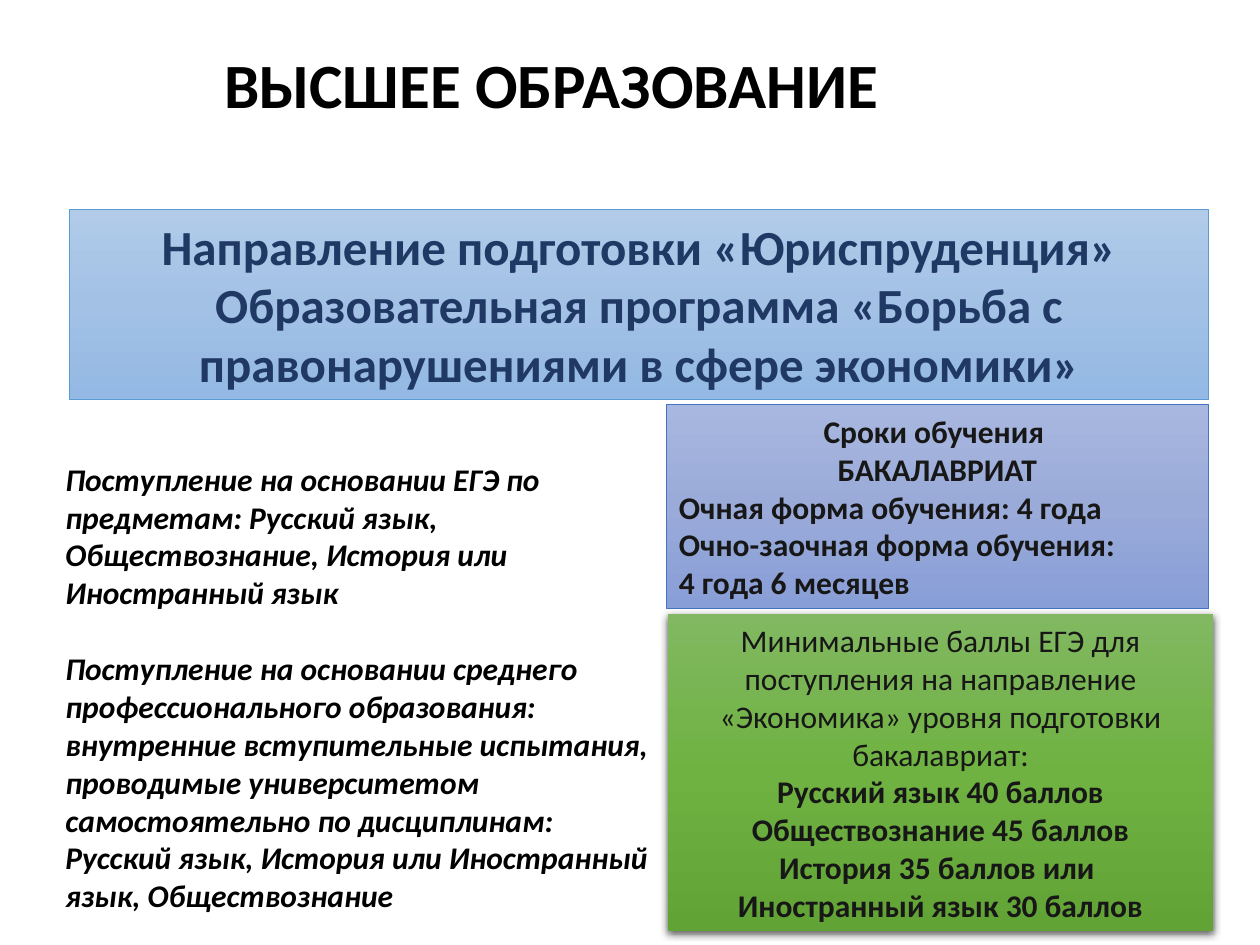
from copy import deepcopy

from lxml.etree import SubElement
from pptx import Presentation
from pptx.dml.color import RGBColor
from pptx.enum.shapes import MSO_SHAPE
from pptx.enum.text import MSO_ANCHOR, PP_ALIGN
from pptx.oxml.ns import qn
from pptx.util import Inches, Pt

BLACK = RGBColor(0x00, 0x00, 0x00)
INK = RGBColor(0x18, 0x17, 0x17)
NAVY = RGBColor(0x20, 0x38, 0x64)
SKY_EDGE = RGBColor(0x5B, 0x9B, 0xD5)
INDIGO_EDGE = RGBColor(0x44, 0x72, 0xC4)
SKY = [RGBColor(0xB1, 0xCB, 0xE9), RGBColor(0xA3, 0xC1, 0xE5), RGBColor(0x93, 0xB9, 0xE4)]
INDIGO = [RGBColor(0xA8, 0xB7, 0xDF), RGBColor(0x9A, 0xAB, 0xD9), RGBColor(0x88, 0x9E, 0xD7)]
GREEN = [RGBColor(0x81, 0xB8, 0x61), RGBColor(0x6F, 0xB2, 0x42), RGBColor(0x62, 0xA3, 0x36)]

FONT = "Calibri"
BODY_SIZE = 18
BLANK_LINE = Pt(22)
SLIDE_WIDTH, SLIDE_HEIGHT = Inches(10), Inches(7.5)


def area(left, top, width, height):
    return [Inches(length) for length in (left, top, width, height)]


def write(frame, lines, size, color, align=PP_ALIGN.CENTER, bold=True, italic=False):
    frame.word_wrap = True
    for index, line in enumerate(lines):
        paragraph = frame.paragraphs[0] if index == 0 else frame.add_paragraph()
        paragraph.text = line
        paragraph.alignment = align
        font = paragraph.font
        font.name, font.size = FONT, Pt(size)
        font.bold, font.italic = bold, italic
        font.color.rgb = color
    return frame.paragraphs


def add_panel(slide, box, shades, edge=None):
    panel = slide.shapes.add_shape(MSO_SHAPE.RECTANGLE, *box)
    panel.shadow.inherit = False
    panel.fill.gradient()
    panel.fill.gradient_angle = 270
    stops = panel._element.spPr.find(qn("a:gradFill")).find(qn("a:gsLst"))
    stops.insert(1, deepcopy(stops[0]))
    for stop, shade, position in zip(panel.fill.gradient_stops, shades, (0, 0.5, 1)):
        stop.color.rgb = shade
        stop.position = position
    if edge is None:
        panel.line.fill.background()
    else:
        panel.line.color.rgb = edge
        panel.line.width = Pt(0.5)
    panel.text_frame.vertical_anchor = MSO_ANCHOR.MIDDLE
    return panel


def add_drop_shadow(panel):
    effects = panel._element.spPr.find(qn("a:effectLst"))
    shadow = SubElement(effects, qn("a:outerShdw"), blurRad=str(Pt(4.5)),
                        dist=str(Pt(1.5)), dir="5400000", algn="ctr", rotWithShape="0")
    color = SubElement(shadow, qn("a:srgbClr"), val=str(BLACK))
    SubElement(color, qn("a:alpha"), val="63000")


def add_heading(slide, box):
    frame = slide.shapes.add_textbox(*box).text_frame
    frame.vertical_anchor = MSO_ANCHOR.MIDDLE
    heading, = write(frame, ["ВЫСШЕЕ ОБРАЗОВАНИЕ"], 36, BLACK)
    heading.line_spacing = 0.9


def add_programme(slide, box):
    panel = add_panel(slide, box, SKY, SKY_EDGE)
    write(panel.text_frame, [
        "Направление подготовки «Юриспруденция»",
        "Образовательная программа «Борьба с правонарушениями в сфере экономики»",
    ], 28, NAVY)


def add_study_terms(slide, box):
    panel = add_panel(slide, box, INDIGO, INDIGO_EDGE)
    terms = write(panel.text_frame, [
        "Сроки обучения ",
        "БАКАЛАВРИАТ",
        "Очная форма обучения: 4 года",
        "Очно-заочная форма обучения:",
        "4 года 6 месяцев",
    ], BODY_SIZE, INK)
    for term in terms[2:]:
        term.alignment = PP_ALIGN.LEFT


def add_minimum_scores(slide, box):
    panel = add_panel(slide, box, GREEN)
    add_drop_shadow(panel)
    scores = write(panel.text_frame, [
        "Минимальные баллы ЕГЭ для поступления на направление «Экономика» "
        "уровня подготовки бакалавриат:",
        "Русский язык 40 баллов",
        "Обществознание 45 баллов",
        "История 35 баллов или ",
        "Иностранный язык 30 баллов",
    ], BODY_SIZE, INK)
    scores[0].font.bold = False


def add_admission(slide, box):
    frame = slide.shapes.add_textbox(*box).text_frame
    routes = write(frame, [
        "Поступление на основании ЕГЭ по предметам: Русский язык, "
        "Обществознание, История или Иностранный язык",
        "Поступление на основании среднего профессионального образования: "
        "внутренние вступительные испытания, проводимые университетом "
        "самостоятельно по дисциплинам:",
        "Русский язык, История или Иностранный язык, Обществознание",
    ], BODY_SIZE, BLACK, PP_ALIGN.LEFT, italic=True)
    routes[1].space_before = BLANK_LINE


def main():
    deck = Presentation()
    deck.slide_width, deck.slide_height = SLIDE_WIDTH, SLIDE_HEIGHT
    slide = deck.slides.add_slide(deck.slide_layouts[6])
    add_heading(slide, area(0.11, 0.11, 8.53, 1.18))
    add_study_terms(slide, area(5.29, 3.21, 4.3, 1.62))
    add_minimum_scores(slide, area(5.3, 4.87, 4.33, 2.52))
    add_admission(slide, area(0.42, 3.6, 5.01, 3.8))
    add_programme(slide, area(0.55, 1.66, 9.04, 1.51))
    deck.save("out.pptx")


if __name__ == "__main__":
    main()
